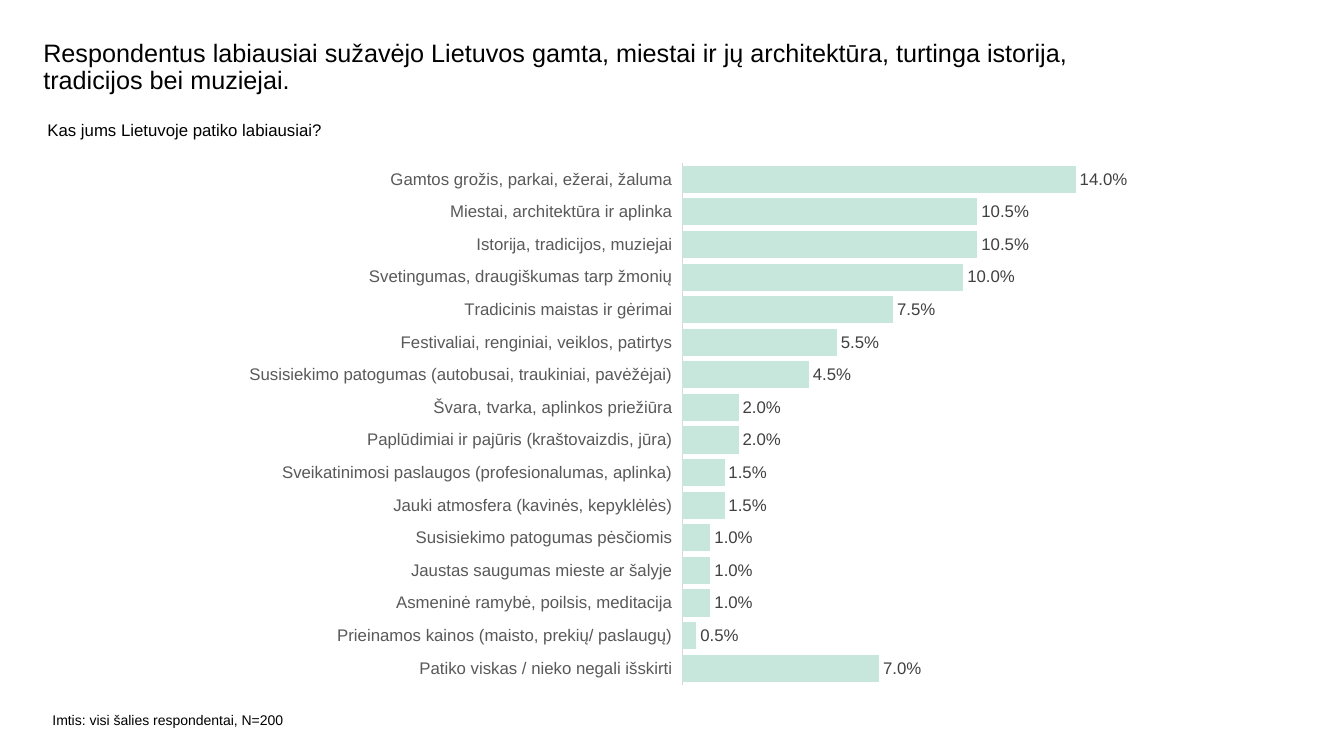
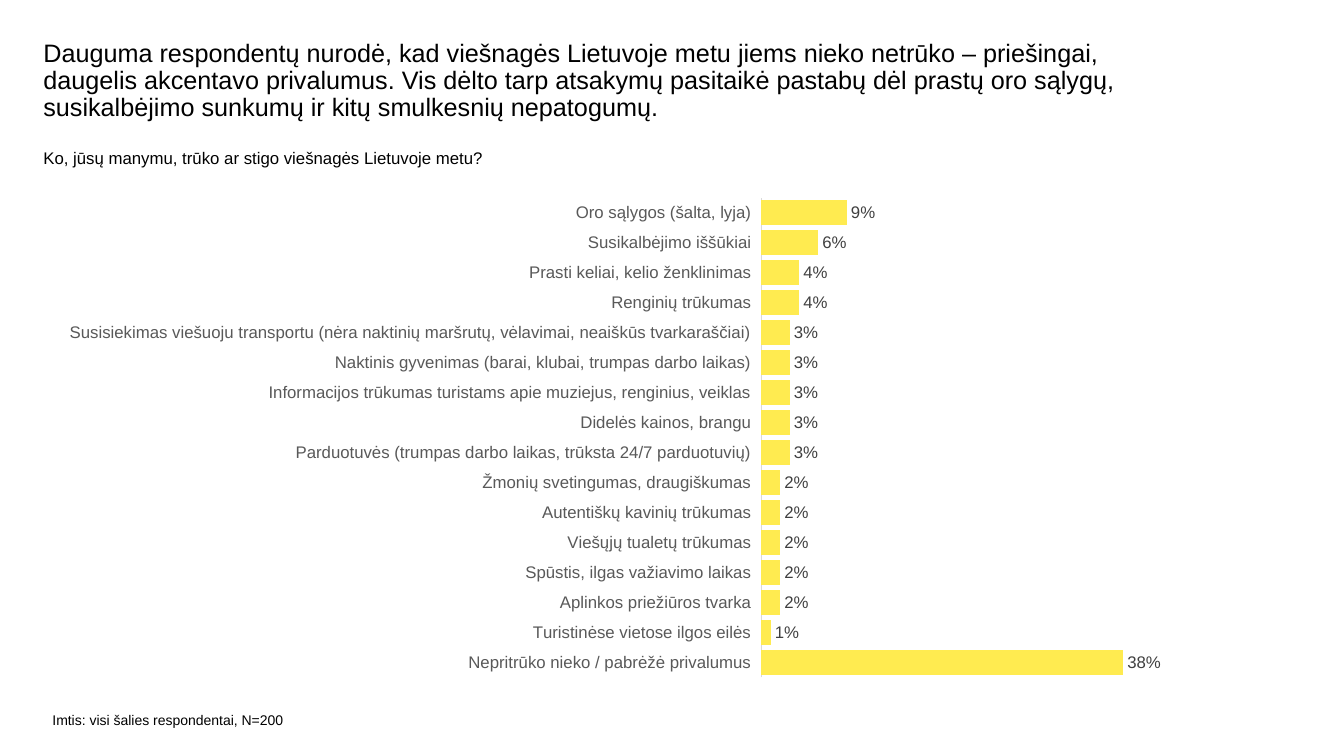
from lxml.etree import SubElement
from pptx import Presentation
from pptx.chart.data import CategoryChartData
from pptx.dml.color import RGBColor
from pptx.enum.chart import XL_CHART_TYPE as ChartType, XL_LABEL_POSITION as LabelPosition
from pptx.enum.chart import XL_TICK_LABEL_POSITION as TickLabel, XL_TICK_MARK as TickMark
from pptx.oxml.ns import qn
from pptx.util import Inches, Pt

FONT = "Arial"
BLACK = RGBColor(0x00, 0x00, 0x00)
LABEL_GREY = RGBColor(0x40, 0x40, 0x40)
CATEGORY_GREY = RGBColor(0x59, 0x59, 0x59)
AXIS_GREY = RGBColor(0xD9, 0xD9, 0xD9)
MINT = RGBColor(0xC7, 0xE6, 0xDC)
YELLOW = RGBColor(0xFF, 0xEB, 0x50)
SAMPLE = "Imtis: visi šalies respondentai, N=200"

LIKED = [
    ("Gamtos grožis, parkai, ežerai, žaluma", 0.14),
    ("Miestai, architektūra ir aplinka", 0.105),
    ("Istorija, tradicijos, muziejai", 0.105),
    ("Svetingumas, draugiškumas tarp žmonių", 0.1),
    ("Tradicinis maistas ir gėrimai", 0.075),
    ("Festivaliai, renginiai, veiklos, patirtys", 0.055),
    ("Susisiekimo patogumas (autobusai, traukiniai, pavėžėjai)", 0.045),
    ("Švara, tvarka, aplinkos priežiūra", 0.02),
    ("Paplūdimiai ir pajūris (kraštovaizdis, jūra)", 0.02),
    ("Sveikatinimosi paslaugos (profesionalumas, aplinka)", 0.015),
    ("Jauki atmosfera (kavinės, kepyklėlės)", 0.015),
    ("Susisiekimo patogumas pėsčiomis", 0.01),
    ("Jaustas saugumas mieste ar šalyje", 0.01),
    ("Asmeninė ramybė, poilsis, meditacija", 0.01),
    ("Prieinamos kainos (maisto, prekių/ paslaugų)", 0.005),
    ("Patiko viskas / nieko negali išskirti", 0.07),
]
MISSED = [
    ("Oro sąlygos (šalta, lyja)", 0.09),
    ("Susikalbėjimo iššūkiai", 0.06),
    ("Prasti keliai, kelio ženklinimas", 0.04),
    ("Renginių trūkumas", 0.04),
    ("Susisiekimas viešuoju transportu (nėra naktinių maršrutų, vėlavimai, neaiškūs tvarkaraščiai)", 0.03),
    ("Naktinis gyvenimas (barai, klubai, trumpas darbo laikas)", 0.03),
    ("Informacijos trūkumas turistams apie muziejus, renginius, veiklas", 0.03),
    ("Didelės kainos, brangu", 0.03),
    ("Parduotuvės (trumpas darbo laikas, trūksta 24/7 parduotuvių)", 0.03),
    ("Žmonių svetingumas, draugiškumas", 0.02),
    ("Autentiškų kavinių trūkumas", 0.02),
    ("Viešųjų tualetų trūkumas", 0.02),
    ("Spūstis, ilgas važiavimo laikas", 0.02),
    ("Aplinkos priežiūros tvarka", 0.02),
    ("Turistinėse vietose ilgos eilės", 0.01),
    ("Nepritrūko nieko / pabrėžė privalumus", 0.38),
]

PAGES = [
    {
        "title": "Respondentus labiausiai sužavėjo Lietuvos gamta, miestai ir jų architektūra, "
                 "turtinga istorija, tradicijos bei muziejai.",
        "title_width": 10.74,
        "question": "Kas jums Lietuvoje patiko labiausiai?",
        "question_at": (0.47, 1.19),
        "answers": LIKED, "color": MINT, "percent": "0.0%", "axis_max": 0.16,
        "chart_box": (2.31, 1.51, 9.1, 5.39),
        "plot": (0.49, 0.02, 0.49, 0.96),
    },
    {
        "title": "Dauguma respondentų nurodė, kad viešnagės Lietuvoje metu jiems nieko netrūko – "
                 "priešingai, daugelis akcentavo privalumus. Vis dėlto tarp atsakymų pasitaikė "
                 "pastabų dėl prastų oro sąlygų, susikalbėjimo sunkumų ir kitų smulkesnių nepatogumų.",
        "title_width": 11.25,
        "question": "Ko, jūsų manymu, trūko ar stigo viešnagės Lietuvoje metu?",
        "question_at": (0.43, 1.47),
        "answers": MISSED, "color": YELLOW, "percent": "0%", "axis_max": 0.4,
        "chart_box": (0.62, 1.79, 14.32, 5.1),
        "plot": (0.484, 0.034, 0.264, 0.933),
    },
]


def add_text(slide, text, left, top, width, height, size, line_spacing=1.0):
    frame = slide.shapes.add_textbox(Inches(left), Inches(top), Inches(width), Inches(height)).text_frame
    frame.word_wrap = True
    frame.margin_left = frame.margin_top = frame.margin_right = frame.margin_bottom = 0
    paragraph = frame.paragraphs[0]
    paragraph.line_spacing = line_spacing
    run = paragraph.add_run()
    run.text = text
    style_font(run.font, size, BLACK)


def style_font(font, size, color):
    font.name = FONT
    font.size = Pt(size)
    font.color.rgb = color


deck = Presentation()
deck.slide_width = Inches(13.33)
deck.slide_height = Inches(7.5)

for page in PAGES:
    slide = deck.slides.add_slide(deck.slide_layouts[6])
    add_text(slide, page["title"], 0.43, 0.4, page["title_width"], 0.8, size=18, line_spacing=0.9)
    add_text(slide, page["question"], *page["question_at"], 11.89, 0.3, size=12)
    add_text(slide, SAMPLE, 0.52, 7.06, 3.86, 0.27, size=10)

    shares = CategoryChartData(number_format=page["percent"])
    names, values = zip(*reversed(page["answers"]))
    shares.categories = names
    shares.add_series("Series 1", values)
    box = [Inches(length) for length in page["chart_box"]]
    chart = slide.shapes.add_chart(ChartType.BAR_CLUSTERED, *box, shares).chart
    chart.has_legend = False
    chart.has_title = False
    style_font(chart.font, 10, BLACK)

    answer_axis = chart.category_axis
    answer_axis.major_tick_mark = answer_axis.minor_tick_mark = TickMark.NONE
    answer_axis.tick_label_position = TickLabel.LOW
    answer_axis.format.line.color.rgb = AXIS_GREY
    answer_axis.format.line.width = Pt(0.75)
    style_font(answer_axis.tick_labels.font, 12, CATEGORY_GREY)

    share_axis = chart.value_axis
    share_axis.visible = False
    share_axis.has_major_gridlines = False
    share_axis.minimum_scale = 0
    share_axis.maximum_scale = page["axis_max"]

    bars = chart.plots[0]
    bars.gap_width = 20
    bars.vary_by_categories = False
    bars.series[0].format.fill.solid()
    bars.series[0].format.fill.fore_color.rgb = page["color"]
    bars.has_data_labels = True
    labels = bars.data_labels
    labels.show_value = True
    labels.position = LabelPosition.OUTSIDE_END
    labels.number_format = page["percent"]
    labels.number_format_is_linked = False
    style_font(labels.font, 12, LABEL_GREY)

    plot_area = chart._chartSpace.find(".//" + qn("c:plotArea"))
    for automatic in plot_area.findall(qn("c:layout")):
        plot_area.remove(automatic)
    layout = SubElement(plot_area, qn("c:layout"))
    plot_area.insert(0, layout)
    manual = SubElement(layout, qn("c:manualLayout"))
    settings = [("layoutTarget", "inner"), ("xMode", "edge"), ("yMode", "edge")]
    settings += zip("xywh", page["plot"])
    for tag, value in settings:
        SubElement(manual, qn("c:" + tag)).set("val", str(value))

deck.save("out.pptx")
